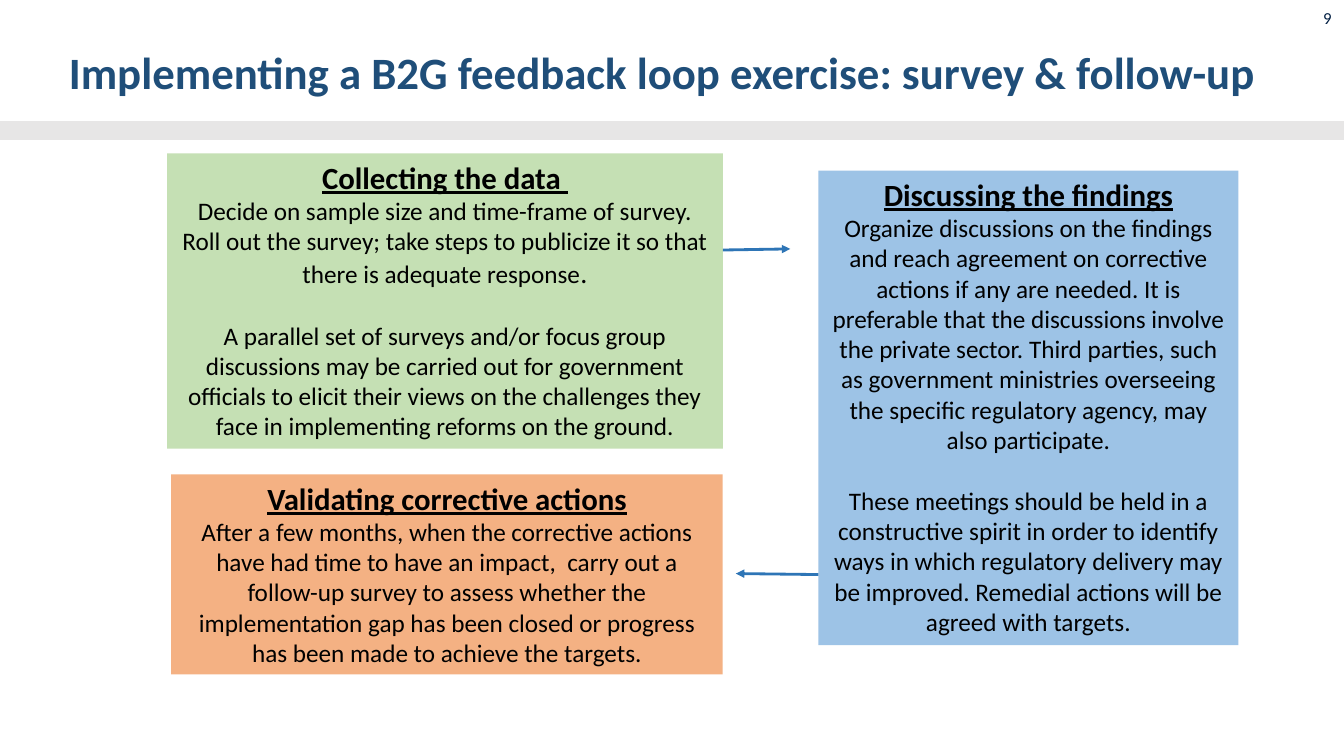
from lxml import etree
from pptx import Presentation
from pptx.dml.color import RGBColor
from pptx.enum import shapes, text
from pptx.oxml import ns
from pptx.util import Pt

FONT = "Calibri"
BLACK = RGBColor(0, 0, 0)
NAVY = RGBColor(0x02, 0x1F, 0x43)
TITLE = RGBColor(0x1F, 0x4E, 0x79)
GREY = RGBColor(0xE7, 0xE6, 0xE6)
GREEN = RGBColor(0xC5, 0xE0, 0xB4)
BLUE = RGBColor(0x9D, 0xC3, 0xE6)
ORANGE = RGBColor(0xF4, 0xB1, 0x83)
ARROW = RGBColor(0x2E, 0x75, 0xB6)
CENTER = text.PP_ALIGN.CENTER
LINE = 22  # height of one line of body text


def write(para, words, size=18, color=BLACK, bold=False, under=False,
          align=CENTER, before=0, leading=None):
    """Add a run of formatted text to a paragraph."""
    para.alignment = align
    para.space_before = Pt(before)
    if leading:
        para.line_spacing = leading
    run = para.add_run()
    run.text = words
    font = run.font
    font.name, font.size, font.bold, font.underline = FONT, Pt(size), bold, under
    font.color.rgb = color


def add_rect(slide, left, top, width, height, fill):
    rect = slide.shapes.add_shape(shapes.MSO_SHAPE.RECTANGLE,
                                  Pt(left), Pt(top), Pt(width), Pt(height))
    rect.shadow.inherit = False
    rect.fill.solid()
    rect.fill.fore_color.rgb = fill
    rect.line.fill.background()
    return rect


def add_label(slide, left, top, width, height, words, right=7.2, **style):
    """Add a line of text, centred vertically, with a given right inset."""
    frame = slide.shapes.add_textbox(Pt(left), Pt(top), Pt(width), Pt(height)).text_frame
    frame.word_wrap = True
    frame.vertical_anchor = text.MSO_ANCHOR.MIDDLE
    frame.margin_right = Pt(right)
    write(frame.paragraphs[0], words, **style)


def add_step(slide, left, top, width, height, fill, head, *body):
    """Add a coloured box with a heading and body paragraphs."""
    frame = add_rect(slide, left, top, width, height, fill).text_frame
    frame.word_wrap = True
    frame.vertical_anchor = text.MSO_ANCHOR.TOP
    write(frame.paragraphs[0], head, size=22, bold=True, under=True)
    for index, words in enumerate(body):
        write(frame.add_paragraph(), words, before=LINE if index else 0)
    return frame


def add_arrow(slide, x1, y1, x2, y2):
    arrow = slide.shapes.add_connector(shapes.MSO_CONNECTOR.STRAIGHT,
                                       Pt(x1), Pt(y1), Pt(x2), Pt(y2))
    arrow.line.color.rgb = ARROW
    arrow.line.width = Pt(2)
    etree.SubElement(arrow.line._get_or_add_ln(), ns.qn("a:tailEnd"), type="triangle")
    etree.SubElement(arrow._element.spPr, ns.qn("a:effectLst"))


def main():
    deck = Presentation()
    deck.slide_width, deck.slide_height = Pt(960), Pt(540)
    slide = deck.slides.add_slide(deck.slide_layouts[6])

    # Band, page number and title
    add_rect(slide, 0, 86.5, 960, 13.5, GREY)
    add_label(slide, 925.2, -1.4, 33.1, 28.8, "9", size=12, color=NAVY,
              align=text.PP_ALIGN.RIGHT)
    add_label(slide, 37.4, 23.8, 888.5, 59.8,
              "Implementing a B2G feedback loop exercise: survey & follow-up",
              right=24, size=32, color=TITLE, bold=True, leading=0.9)

    # Steps of the loop
    collect = add_step(
        slide, 119.3, 109.5, 397, 211, GREEN, "Collecting the data ",
        "Decide on sample size and time-frame of survey. Roll out the survey; "
        "take steps to publicize it so that there is adequate response",
        "A parallel set of surveys and/or focus group discussions may be carried "
        "out for government officials to elicit their views on the challenges "
        "they face in implementing reforms on the ground.")
    write(collect.paragraphs[1], ".", size=20)
    add_step(
        slide, 584.6, 121.8, 300, 339, BLUE, "Discussing the findings",
        "Organize discussions on the findings and reach agreement on corrective "
        "actions if any are needed. It is preferable that the discussions involve "
        "the private sector. Third parties, such as government ministries "
        "overseeing the specific regulatory agency, may also participate.",
        "These meetings should be held in a constructive spirit in order to "
        "identify ways in which regulatory delivery may be improved. Remedial "
        "actions will be agreed with targets.")
    add_step(
        slide, 122.3, 338.8, 394, 143, ORANGE, "Validating corrective actions",
        "After a few months, when the corrective actions have had time to have an "
        "impact,  carry out a follow-up survey to assess whether the "
        "implementation gap has been closed or progress has been made to achieve "
        "the targets.")

    # Arrows between steps
    add_arrow(slide, 516.3, 178.6, 564.5, 177.8)
    add_arrow(slide, 584.6, 410.4, 525.6, 409.7)

    deck.save("out.pptx")


if __name__ == "__main__":
    main()
